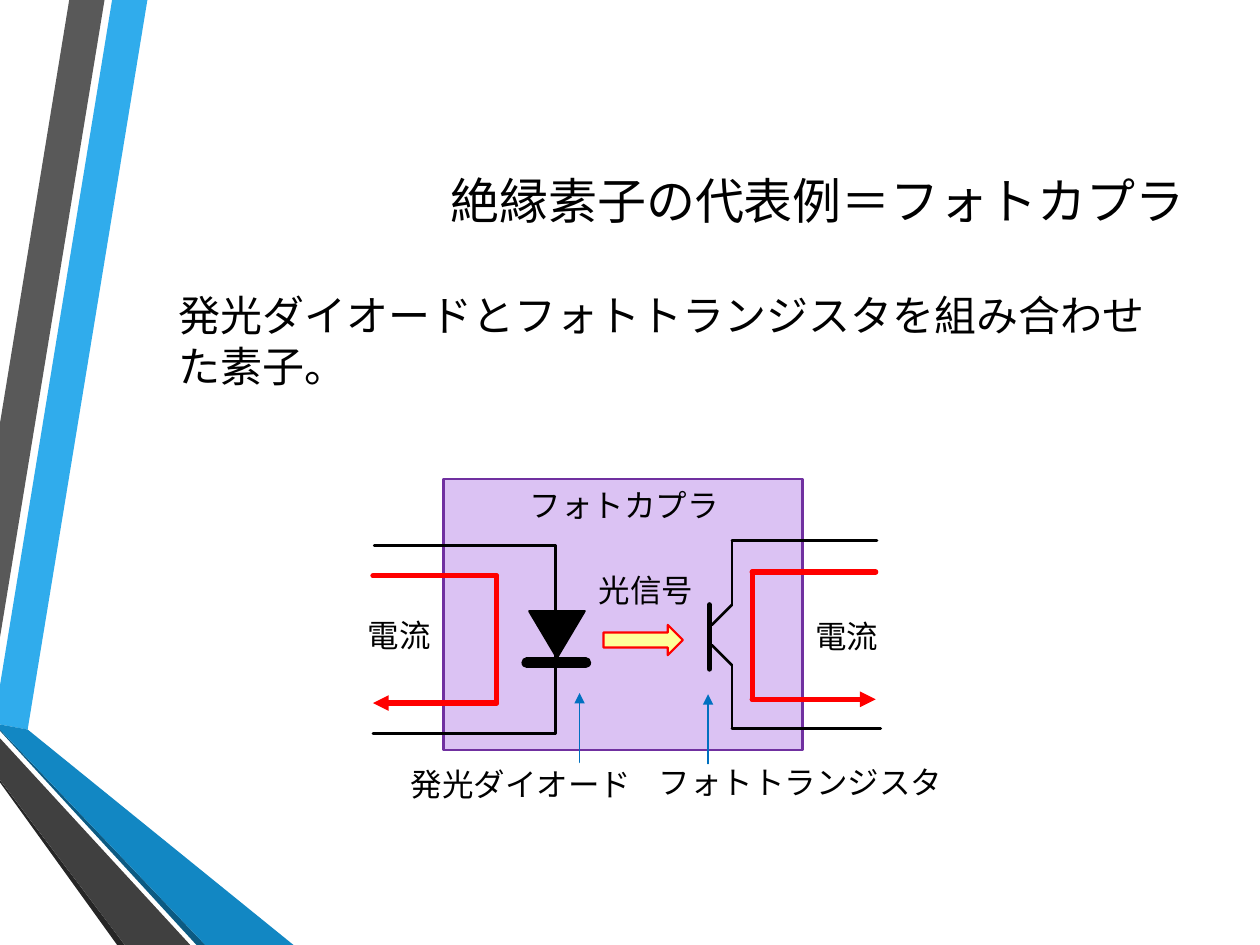
from itertools import pairwise

from lxml import etree
from pptx import Presentation
from pptx.dml.color import RGBColor
from pptx.enum.shapes import MSO_CONNECTOR, MSO_SHAPE
from pptx.enum.text import MSO_ANCHOR, PP_ALIGN
from pptx.oxml.ns import qn
from pptx.util import Inches, Pt

STRAIGHT = MSO_CONNECTOR.STRAIGHT
RECT = MSO_SHAPE.RECTANGLE
TRIANGLE = MSO_SHAPE.ISOSCELES_TRIANGLE
RIGHT_ARROW = MSO_SHAPE.RIGHT_ARROW
LEFT, CENTER, RIGHT = PP_ALIGN.LEFT, PP_ALIGN.CENTER, PP_ALIGN.RIGHT
TOP, MIDDLE = MSO_ANCHOR.TOP, MSO_ANCHOR.MIDDLE

FONT = "Calibri"
COLORS = {
    "black": "000000", "red": "FF0000", "pointer": "0070C0",
    "package": "DBC2F3", "package_edge": "7030A0", "light": "FFFF99",
    "blue": "30ACEC", "grey": "595959", "dark_edge": "262626",
    "blue_edge": "0C5A82", "deep_blue": "1287C3", "dark": "404040",
}

TITLE = "絶縁素子の代表例＝フォトカプラ"
BODY = "発光ダイオードとフォトトランジスタを組み合わせた素子。"

# Decorative ribbons: color, outline points
RIBBONS = [
    ("blue", [(0, 5.44), (0, 5.75), (0.22, 5.79), (1.17, 0), (0.89, 0)]),
    ("grey", [(0.83, 0), (0.55, 0), (0, 3.36), (0, 5.06)]),
    ("dark_edge", [(0, 6.19), (0, 6.21), (0.93, 7.5), (0.99, 7.5)]),
    ("blue_edge", [(0, 5.79), (0, 5.8), (1.56, 7.5), (1.63, 7.5)]),
    ("deep_blue", [(0, 5.79), (1.63, 7.5), (2.33, 7.5), (0.22, 5.79), (0, 5.75)]),
    ("dark", [(0, 6.19), (0.99, 7.5), (1.51, 7.5), (0, 5.86)]),
]

# Preset shapes: kind, box, fill, line, rotation
PARTS = [
    (RECT, (3.52, 3.8, 2.85, 2.15), "package", "package_edge", 0),
    (TRIANGLE, (4.2, 4.85, 0.44, 0.37), "black", "black", 180),
    (RIGHT_ARROW, (4.79, 4.96, 0.63, 0.24), "light", "red", 0),
]

# Lines: points, color, width, arrow at the end
WIRES = [
    ([(4.18, 5.26), (4.65, 5.26)], "black", 6, False),
    ([(5.63, 4.8), (5.63, 5.31)], "black", 3, False),
    ([(5.65, 4.96), (5.81, 4.8), (5.81, 4.29), (6.96, 4.29)], "black", 1.5, False),
    ([(5.65, 5.12), (5.81, 5.28), (5.81, 5.78), (6.99, 5.78)], "black", 1.5, False),
    ([(2.97, 4.33), (4.41, 4.33), (4.41, 5.82), (2.96, 5.82)], "black", 1.5, False),
    ([(2.96, 4.57), (3.94, 4.57), (3.94, 5.58), (2.96, 5.58)], "red", 3, True),
    ([(6.95, 4.54), (5.97, 4.54), (5.97, 5.55), (6.95, 5.55)], "red", 3, True),
    ([(4.6, 6.05), (4.6, 5.5)], "pointer", 1, True),
    ([(5.62, 6.06), (5.62, 5.51)], "pointer", 1, True),
]

# Labels: text, left, top, width, alignment
LABELS = [
    ("光信号", 4.62, 4.48, 1.01, CENTER),
    ("発光ダイオード", 3.1, 6.02, 2.01, RIGHT),
    ("フォトトランジスタ", 5.13, 6.01, 2.65, LEFT),
    ("フォトカプラ", 3.68, 3.81, 2.55, CENTER),
    ("電流", 2.8, 4.84, 0.74, CENTER),
    ("電流", 6.35, 4.85, 0.74, CENTER),
]


def rgb(name):
    return RGBColor.from_string(COLORS[name])


def write(sp, text, size=18, align=LEFT, anchor=TOP):
    tf = sp.text_frame
    tf.word_wrap = True
    tf.vertical_anchor = anchor
    p = tf.paragraphs[0]
    p.alignment = align
    r = p.add_run()
    r.text = text
    r.font.name, r.font.size = FONT, Pt(size)
    r.font.color.rgb = rgb("black")


def paint(sp, fill, line=None):
    sp.shadow.inherit = False
    sp.fill.solid()
    sp.fill.fore_color.rgb = rgb(fill)
    if line:
        sp.line.color.rgb = rgb(line)
        sp.line.width = Pt(1.25)
    else:
        sp.line.fill.background()


def add_label(shapes, text, box, **fmt):
    write(shapes.add_textbox(*map(Inches, box)), text, **fmt)


def add_wire(shapes, start, end, color, width, arrow):
    cx = shapes.add_connector(STRAIGHT, *map(Inches, (*start, *end)))
    cx.line.color.rgb = rgb(color)
    cx.line.width = Pt(width)
    ln = cx.line._get_or_add_ln()
    ln.set("cap", "rnd")
    etree.SubElement(ln, qn("a:round"))
    if arrow:
        etree.SubElement(ln, qn("a:tailEnd"), type="triangle")
    etree.SubElement(cx._element.spPr, qn("a:effectLst"))


prs = Presentation()
prs.slide_width, prs.slide_height = Inches(10), Inches(7.5)
s = prs.slides.add_slide(prs.slide_layouts[5])

# Ribbons along the left edge
for color, points in RIBBONS:
    (x, y), *rest = [(Inches(px), Inches(py)) for px, py in points]
    builder = s.shapes.build_freeform(x, y)
    builder.add_line_segments(rest, close=True)
    paint(builder.convert_to_shape(), color)

# Title and description
title = s.shapes.title
title.left, title.top, title.width, title.height = map(Inches, (1.07, 0.5, 8.43, 2.17))
write(title, TITLE, size=28, align=RIGHT, anchor=MIDDLE)
add_label(s.shapes, BODY, (1.32, 2.25, 8.18, 0.91), size=24)

# Photocoupler circuit
circuit = s.shapes.add_group_shape().shapes
for kind, box, fill, line, rotation in PARTS:
    sp = circuit.add_shape(kind, *map(Inches, box))
    sp.rotation = rotation
    paint(sp, fill, line)
for points, color, width, arrow in WIRES:
    for start, end in pairwise(points):
        add_wire(circuit, start, end, color, width, arrow and end == points[-1])
for text, left, top, width, align in LABELS:
    add_label(circuit, text, (left, top, width, 0.4), align=align)

prs.save("out.pptx")
